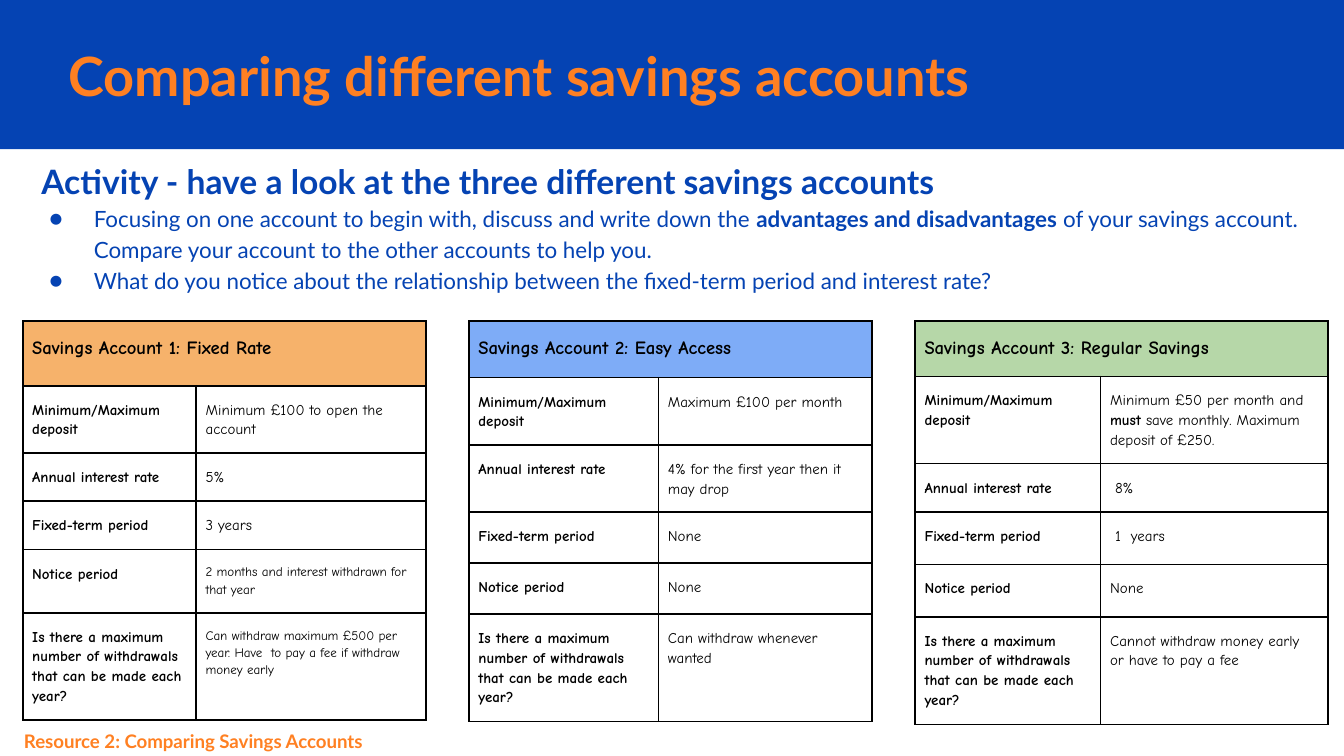
from typing import NamedTuple

from lxml.etree import SubElement
from pptx import Presentation
from pptx.dml.color import RGBColor
from pptx.enum.shapes import MSO_SHAPE
from pptx.enum.text import MSO_ANCHOR, MSO_AUTO_SIZE, PP_ALIGN
from pptx.oxml.ns import qn
from pptx.util import Inches, Pt

COLORS = {
    "blue": "0543B3", "orange": "FF8022", "black": "000000",
    "fixed": "F6B26B", "easy": "7EACF7", "regular": "B6D7A8",
}
HEADING_FONT, TABLE_FONT = "Lato", "Comic Neue"
TABLE_TOP = 2.39
TASK_SIZE = 12
LABELS = [
    "Minimum/Maximum deposit",
    "Annual interest rate",
    "Fixed-term period",
    "Notice period",
    "Is there a maximum number of withdrawals that can be made each year?",
]


class Answer(NamedTuple):
    text: str
    size: float = 8


class Account(NamedTuple):
    heading: str
    color: str
    left: float
    columns: list[float]
    rows: list[float]
    answers: list[Answer]


ACCOUNTS = [
    Account("Savings Account 1: Fixed Rate", "fixed", 0.17, [1.29, 1.71],
            [0.48, 0.5, 0.36, 0.36, 0.47, 0.8],
            [Answer("Minimum £100 to open the account"),
             Answer("5%"),
             Answer("3 years"),
             Answer("2 months and interest withdrawn for that year", 7),
             Answer("Can withdraw maximum £500 per year. Have  to pay a fee "
                    "if withdraw money early", 7)]),
    Account("Savings Account 2: Easy Access", "easy", 3.49, [1.41, 1.59],
            [0.42, 0.5, 0.5, 0.38, 0.38, 0.8],
            [Answer("Maximum £100 per month"),
             Answer("4% for the first year then it may drop"),
             Answer("None"),
             Answer("None"),
             Answer("Can withdraw whenever wanted")]),
    Account("Savings Account 3: Regular Savings", "regular", 6.81, [1.38, 1.69],
            [0.41, 0.65, 0.36, 0.39, 0.39, 0.8],
            [Answer("Minimum £50 per month and **must** save monthly. "
                    "Maximum deposit of £250."),
             Answer(" 8%"),
             Answer(" 1  years"),
             Answer("None"),
             Answer("Cannot withdraw money early or have to pay a fee")]),
]


def rgb(name: str) -> RGBColor:
    return RGBColor.from_string(COLORS[name])


def write(paragraph, text: str, font: str, size: float, color: str,
          bold: bool = False, spacing: float | None = None) -> None:
    """Write text; parts between double asterisks are bold."""
    paragraph.line_spacing = spacing
    for index, part in enumerate(text.split("**")):
        run = paragraph.add_run()
        run.text = part
        run.font.name = font
        run.font.size = Pt(size)
        run.font.bold = bold or index % 2 == 1
        run.font.color.rgb = rgb(color)


def add_box(slide, left: float, top: float, width: float, height: float):
    frame = slide.shapes.add_textbox(
        Inches(left), Inches(top), Inches(width), Inches(height)).text_frame
    frame.word_wrap = True
    frame.margin_left = frame.margin_right = Inches(0.1)
    frame.margin_top = frame.margin_bottom = Inches(0.1)
    return frame


def set_indent(paragraph, left: float, first: float = 0) -> None:
    properties = paragraph._p.get_or_add_pPr()
    properties.set("marL", str(Inches(left)))
    properties.set("indent", str(Inches(first)))


def add_bullet(paragraph) -> None:
    set_indent(paragraph, 0.5, -0.33)
    properties = paragraph._p.get_or_add_pPr()
    bullet_color = SubElement(properties, qn("a:buClr"))
    SubElement(bullet_color, qn("a:srgbClr"), val=COLORS["blue"])
    SubElement(properties, qn("a:buSzPts"), val=str(TASK_SIZE * 100))
    SubElement(properties, qn("a:buFont"), typeface=HEADING_FONT)
    SubElement(properties, qn("a:buChar"), char="●")


def format_cell(cell, fill: str | None = None) -> None:
    cell.margin_left = cell.margin_right = Inches(0.07)
    cell.margin_top = cell.margin_bottom = Inches(0.1)
    cell.vertical_anchor = MSO_ANCHOR.TOP
    properties = cell._tc.get_or_add_tcPr()
    for side in ("a:lnL", "a:lnR", "a:lnT", "a:lnB"):
        border = SubElement(properties, qn(side), w=str(Pt(1)))
        border_fill = SubElement(border, qn("a:solidFill"))
        SubElement(border_fill, qn("a:srgbClr"), val=COLORS["black"])
    if fill:
        cell.fill.solid()
        cell.fill.fore_color.rgb = rgb(fill)
    else:
        cell.fill.background()


def write_cell(cell, text: str, size: float, bold: bool = False) -> None:
    write(cell.text_frame.paragraphs[0], text, TABLE_FONT, size, "black", bold, 1.15)


def add_account(slide, account: Account) -> None:
    table = slide.shapes.add_table(
        len(account.rows), len(account.columns),
        Inches(account.left), Inches(TABLE_TOP),
        Inches(sum(account.columns)), Inches(sum(account.rows))).table
    table.first_row = table.horz_banding = False
    for column, width in zip(table.columns, account.columns):
        column.width = Inches(width)
    for index, (row, height) in enumerate(zip(table.rows, account.rows)):
        row.height = Inches(height)
        for cell in row.cells:
            format_cell(cell, account.color if index == 0 else None)
    heading = table.cell(0, 0)
    heading.merge(table.cell(0, 1))
    write_cell(heading, account.heading, 10, bold=True)
    for index, (label, answer) in enumerate(zip(LABELS, account.answers), start=1):
        write_cell(table.cell(index, 0), label, 8, bold=True)
        write_cell(table.cell(index, 1), answer.text, answer.size)


def main() -> None:
    presentation = Presentation()
    presentation.slide_width = Inches(10)
    presentation.slide_height = presentation.slide_width * 9 // 16
    slide = presentation.slides.add_slide(presentation.slide_layouts[5])

    # Title band, kept behind the title
    band = slide.shapes.add_shape(
        MSO_SHAPE.RECTANGLE, 0, 0, Inches(10), Inches(1.11))
    band.shadow.inherit = False
    band.fill.solid()
    band.fill.fore_color.rgb = rgb("blue")
    band.line.fill.background()
    title = slide.shapes.title
    band._element.addnext(title._element)
    title.left, title.top = Inches(0.41), Inches(0.28)
    title.width, title.height = Inches(8.46), Inches(0.56)
    title_frame = title.text_frame
    title_frame.auto_size = MSO_AUTO_SIZE.NONE
    title_frame.vertical_anchor = MSO_ANCHOR.MIDDLE
    title_line = title_frame.paragraphs[0]
    title_line.alignment = PP_ALIGN.LEFT
    write(title_line, "Comparing different savings accounts",
          HEADING_FONT, 29, "orange", bold=True)

    # Account tables
    for account in ACCOUNTS:
        add_account(slide, account)

    # Activity instructions
    activity = add_box(slide, 0.1, 1.05, 9.8, 1.22)
    activity_heading = activity.paragraphs[0]
    set_indent(activity_heading, 0.11)
    write(activity_heading,
          "Activity - have a look at the three different savings accounts",
          HEADING_FONT, 18, "blue", bold=True, spacing=1.15)
    for task in (
        "Focusing on one account to begin with, discuss and write down the "
        "**advantages and disadvantages** of your savings account. "
        "Compare your account to the other accounts to help you.",
        "What do you notice about the relationship between the fixed-term "
        "period and interest rate?",
    ):
        task_line = activity.add_paragraph()
        add_bullet(task_line)
        write(task_line, task, HEADING_FONT, TASK_SIZE, "blue", spacing=1.15)

    # Resource caption
    caption = add_box(slide, 0.08, 5.35, 5.14, 0.37)
    write(caption.paragraphs[0], "Resource 2: Comparing Savings Accounts",
          HEADING_FONT, 10, "orange", bold=True)

    presentation.save("out.pptx")


if __name__ == "__main__":
    main()
